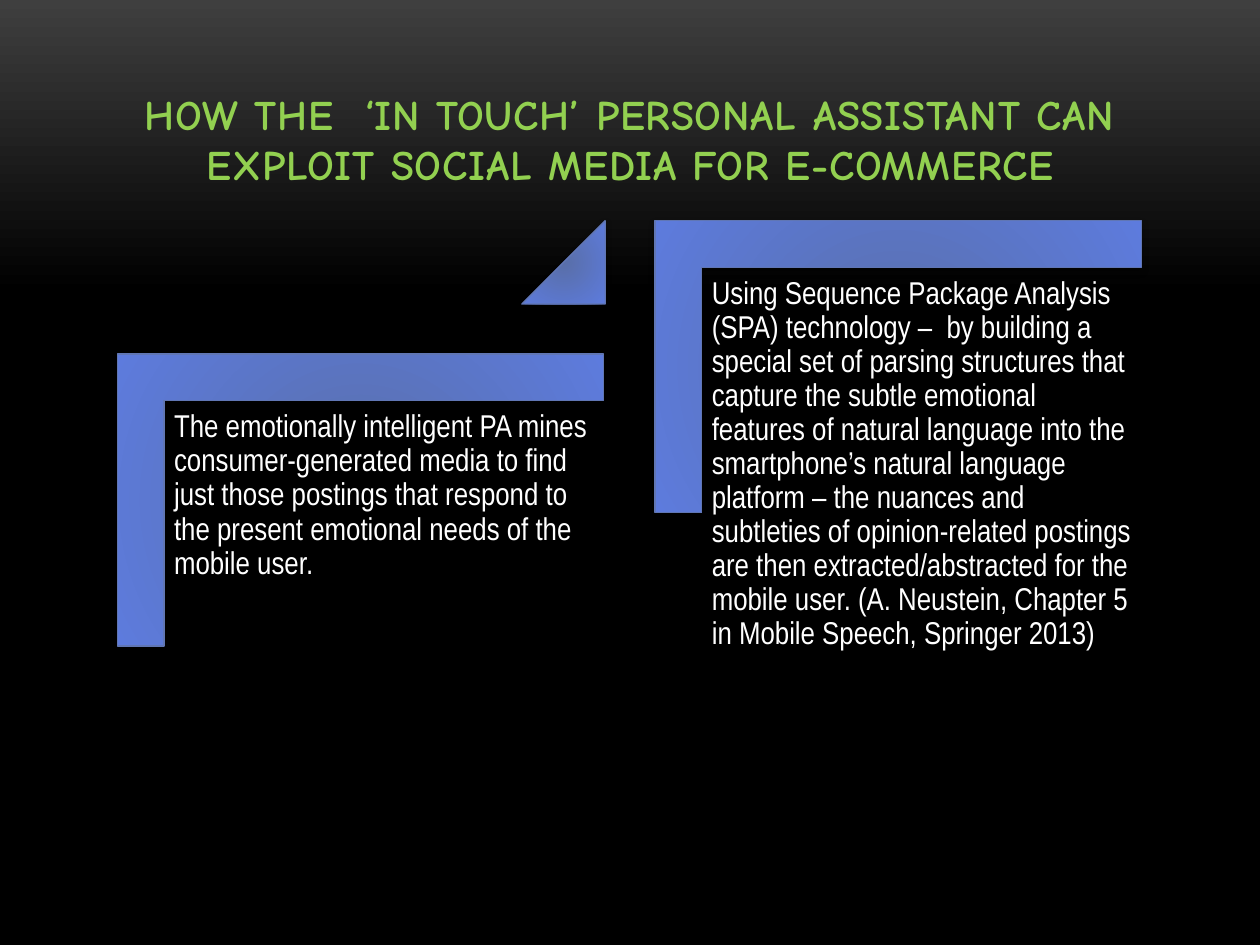
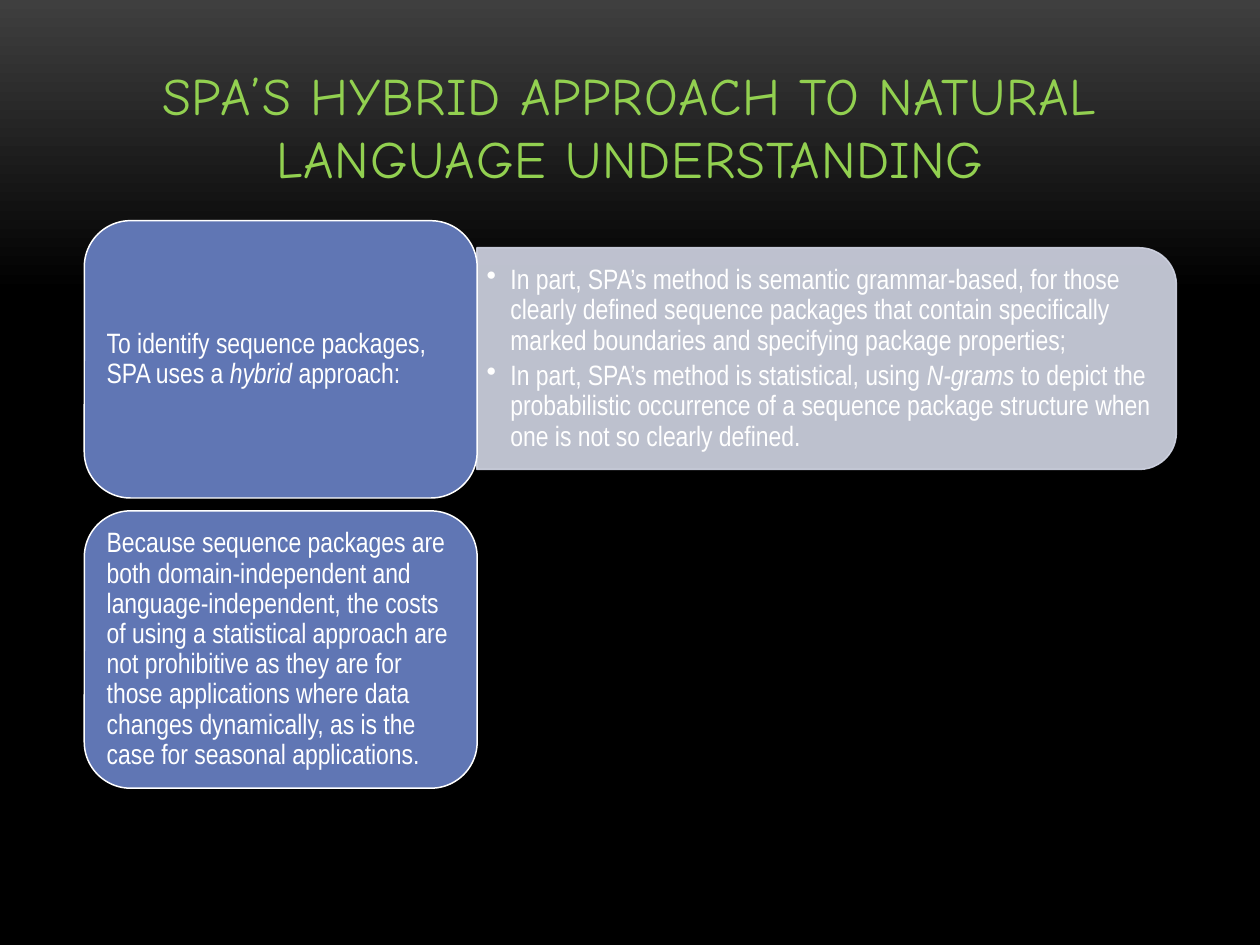
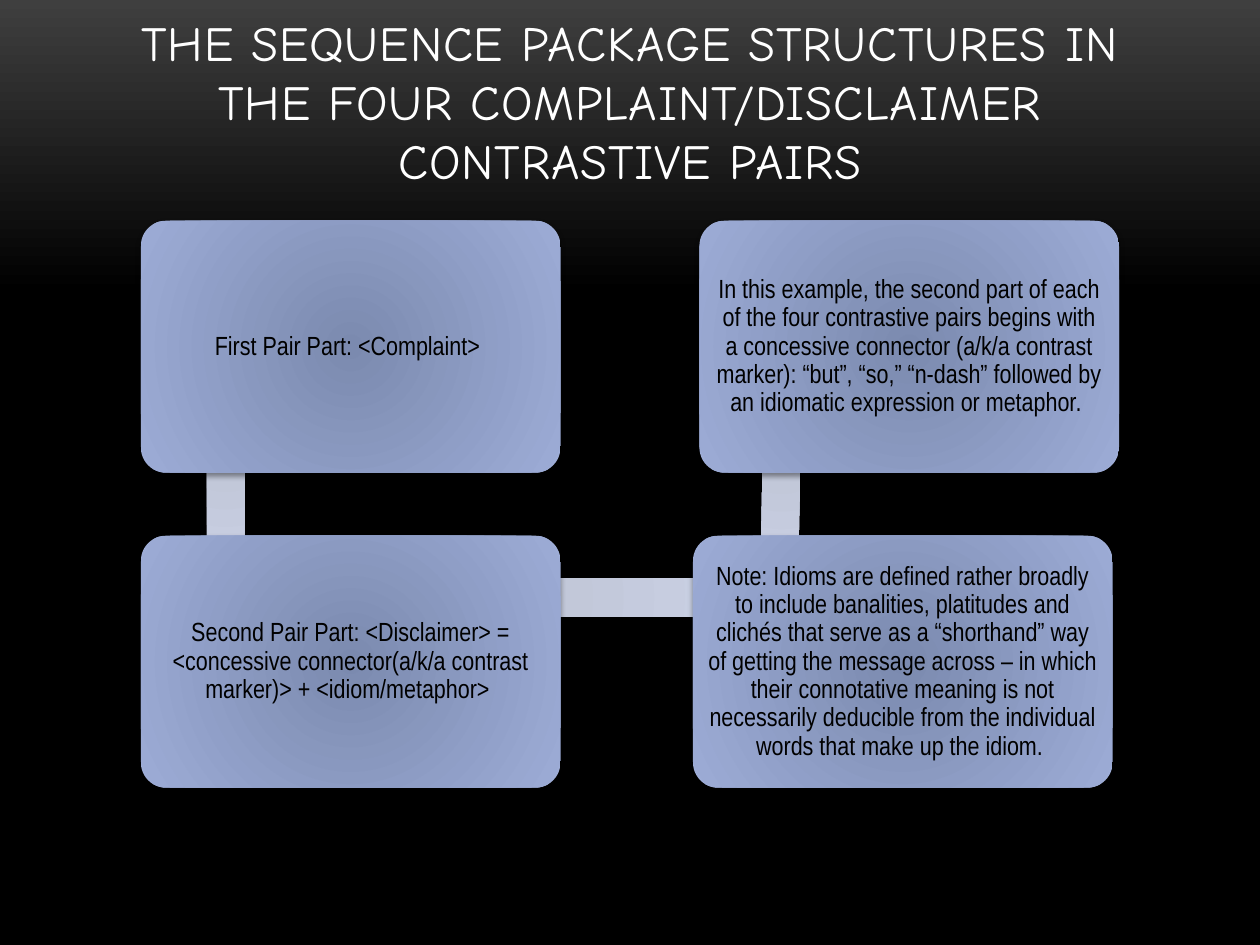
from pptx import Presentation
from pptx.dml.color import RGBColor as RGB
from pptx.enum.shapes import MSO_SHAPE as Geo
from pptx.enum.text import MSO_ANCHOR as Anchor, MSO_AUTO_SIZE as Fit, PP_ALIGN as Align
from pptx.oxml import parse_xml
from pptx.oxml.ns import nsdecls
from pptx.util import Cm, Pt
from lxml.etree import SubElement

INK = {
    "green": "92D050", "white": "FFFFFF", "black": "000000", "grey": "3F3F3F",
    "blue": "6076B4", "pale": "D2D6E5",
    "frame": ("596EA8", "5D7BDD"),
    "card": ("7B8AAF", "9DACD6"),
    "bar": ("BFC4D4", "CBD2E7"),
}
INK_NS = nsdecls("a")
A = "{http://schemas.openxmlformats.org/drawingml/2006/main}"


def glow(shape, pair, blur):
    shape.fill.gradient()
    for stop, tone, spot in zip(shape.fill.gradient_stops, pair, (0, 1)):
        stop.color.rgb = RGB.from_string(tone)
        stop.position = spot
    grad = shape._element.spPr.find(A + "gradFill")
    grad.replace(grad.find(A + "lin"), parse_xml(
        f'<a:path {INK_NS} path="circle">'
        '<a:fillToRect l="100000" t="100000" r="100000" b="100000"/></a:path>'))
    shape.line.fill.background()
    shape.shadow.inherit = False
    shape._element.spPr.find(A + "effectLst").append(parse_xml(
        f'<a:outerShdw {INK_NS} blurRad="{Pt(blur)}" dist="{Pt(2)}" dir="5400000" rotWithShape="0">'
        '<a:srgbClr val="000000"><a:alpha val="40000"/></a:srgbClr></a:outerShdw>'))


def write(shape, lines, size, tone, pads, anchor=Anchor.MIDDLE, align=Align.LEFT, dots=False):
    frame = shape.text_frame
    frame.word_wrap = True
    frame.vertical_anchor = anchor
    frame.margin_left = frame.margin_right = Cm(pads[0])
    frame.margin_top = frame.margin_bottom = Cm(pads[1])
    for num, line in enumerate(lines):
        para = frame.add_paragraph() if num else frame.paragraphs[0]
        for part, words in enumerate(line.split("*")):
            run = para.add_run()
            run.text = words
            if part % 2:
                run.font.italic = True
        para.alignment = align
        para.line_spacing = 0.9
        if dots:
            para.level = 1
            para.space_after = Pt(3)
            props = para._p.get_or_add_pPr()
            props.set("marL", f"{Cm(0.48)}")
            props.set("indent", f"{-Cm(0.48)}")
            SubElement(props, A + "buChar", char="•")
        para.font.name = "Arial Narrow"
        para.font.size = Pt(size)
        para.font.color.rgb = RGB.from_string(INK[tone])


deck = Presentation()
deck.slide_width, deck.slide_height = Cm(25.4), Cm(19.05)

back = deck.slide_master.background.fill
back.gradient()
back.gradient_angle = 270
for stop, tone, spot in zip(back.gradient_stops, ("grey", "black"), (0, 0.31)):
    stop.color.rgb = RGB.from_string(INK[tone])
    stop.position = spot

pages = []
for words, size, tone, bold in (
    ("HOW THE  ‘IN TOUCH’ PERSONAL ASSISTANT CAN EXPLOIT SOCIAL MEDIA FOR E-COMMERCE", 24, "green", True),
    ("SPA’S HYBRID APPROACH TO NATURAL LANGUAGE UNDERSTANDING", 30, "green", False),
    ("THE SEQUENCE PACKAGE STRUCTURES IN THE FOUR COMPLAINT/DISCLAIMER CONTRASTIVE PAIRS", 28, "white", False),
):
    page = deck.slides.add_slide(deck.slide_layouts[5])
    title = page.shapes.title
    title.left, title.top, title.width, title.height = Cm(1.7), Cm(0.76), Cm(22.02), Cm(3.18)
    frame = title.text_frame
    frame.text = words
    frame.word_wrap = True
    frame.auto_size = Fit.NONE
    frame.vertical_anchor = Anchor.BOTTOM
    para = frame.paragraphs[0]
    para.alignment = Align.CENTER
    para.font.name = "Comic Neue"
    para.font.size = Pt(size)
    para.font.bold = bold
    para.font.color.rgb = RGB.from_string(INK[tone])
    para.runs[0]._r.get_or_add_rPr().set("spc", "50")
    pages.append(page.shapes)

steps, hybrid, pairs = pages

marks = []
for left, top, words in (
    (4.32, 5.18, "The emotionally intelligent PA mines consumer-generated media to find just those postings that respond to the present emotional needs of the mobile user."),
    (15.16, 2.49, "Using Sequence Package Analysis (SPA) technology –  by building a special set of parsing structures that capture the subtle emotional features of natural language into the smartphone’s natural language platform – the nuances and subtleties of opinion-related postings are then extracted/abstracted for the mobile user. (A. Neustein, Chapter 5 in Mobile Speech, Springer 2013)"),
):
    corner = steps.add_shape(Geo.CORNER, Cm(left), Cm(top), Cm(5.89), Cm(9.8))
    corner.rotation = 90
    corner.adjustments[0] = corner.adjustments[1] = 0.16
    marks.append(corner)
    note = steps.add_textbox(Cm(left - 0.99), Cm(top + 2.92), Cm(8.86), Cm(7.77))
    write(note, [words], 18, "white", (0.18, 0.18), Anchor.TOP)
wedge = steps.add_shape(Geo.ISOSCELES_TRIANGLE, Cm(10.52), Cm(4.45), Cm(1.68), Cm(1.68))
wedge.adjustments[0] = 1
for mark in marks + [wedge]:
    glow(mark, INK["frame"], 4)
    mark.line.color.rgb = RGB.from_string(INK["blue"])
    mark.line.width = Pt(0.75)

panel = hybrid.add_shape(Geo.ROUND_2_SAME_RECTANGLE, Cm(14.43), Cm(0.18), Cm(4.47), Cm(14.1))
panel.rotation = 90
panel.shadow.inherit = False
panel.fill.solid()
panel.fill.fore_color.rgb = panel.line.color.rgb = RGB.from_string(INK["pale"])
panel.line.width = Pt(0.85)
for tint in panel._element.spPr.iter(A + "srgbClr"):
    SubElement(tint, A + "alpha", val="90000")
note = hybrid.add_textbox(Cm(9.63), Cm(5.23), Cm(13.87), Cm(4.01))
write(note, [
    "In part, SPA’s method is semantic grammar-based, for those clearly defined sequence packages that contain specifically marked boundaries and specifying package properties;",
    "In part, SPA’s method is statistical, using *N-grams* to depict the probabilistic occurrence of a sequence package structure when one is not so clearly defined.",
], 16, "white", (0.18, 0.08), dots=True)
for row, words in enumerate((
    "To identify sequence packages, SPA uses a *hybrid* approach:",
    "Because sequence packages are both domain-independent and language-independent, the costs of using a statistical approach are not prohibitive as they are for those applications where data changes dynamically, as is the case for seasonal applications.",
)):
    card = hybrid.add_shape(Geo.ROUNDED_RECTANGLE, Cm(1.7), Cm(4.45 + row * 5.85), Cm(7.92), Cm(5.59))
    card.shadow.inherit = False
    card.fill.solid()
    card.fill.fore_color.rgb = RGB.from_string(INK["blue"])
    card.line.color.rgb = RGB.from_string(INK["white"])
    card.line.width = Pt(0.85)
    write(card, [words], 16, "white", (0.18, 0.08))

for left, top, width, turn in ((1.4, 8.48, 6.3, 90), (4.57, 11.66, 11.07, 0), (12.6, 8.51, 6.32, 271)):
    bar = pairs.add_shape(Geo.RECTANGLE, Cm(left), Cm(top), Cm(width), Cm(0.76))
    bar.rotation = turn
    glow(bar, INK["bar"], 3)
for left, top, words in (
    (2.84, 4.45, "First Pair Part: <Complaint> "),
    (2.84, 10.8, "Second Pair Part: <Disclaimer> = <concessive connector(a/k/a contrast marker)> + <idiom/metaphor> "),
    (13.97, 10.8, "Note: Idioms are defined rather broadly to include banalities, platitudes and clichés that serve as a “shorthand” way of getting the message across – in which their connotative meaning is not necessarily deducible from the individual words that make up the idiom. "),
    (14.1, 4.45, "In this example, the second part of each of the four contrastive pairs begins with a concessive connector (a/k/a contrast marker): “but”, “so,” “n-dash” followed by an idiomatic expression or metaphor. "),
):
    card = pairs.add_shape(Geo.ROUNDED_RECTANGLE, Cm(left), Cm(top), Cm(8.46), Cm(5.08))
    card.adjustments[0] = 0.1
    glow(card, INK["card"], 3)
    write(card, [words], 15, "black", (0.15, 0.15), align=Align.CENTER)

deck.save("out.pptx")
